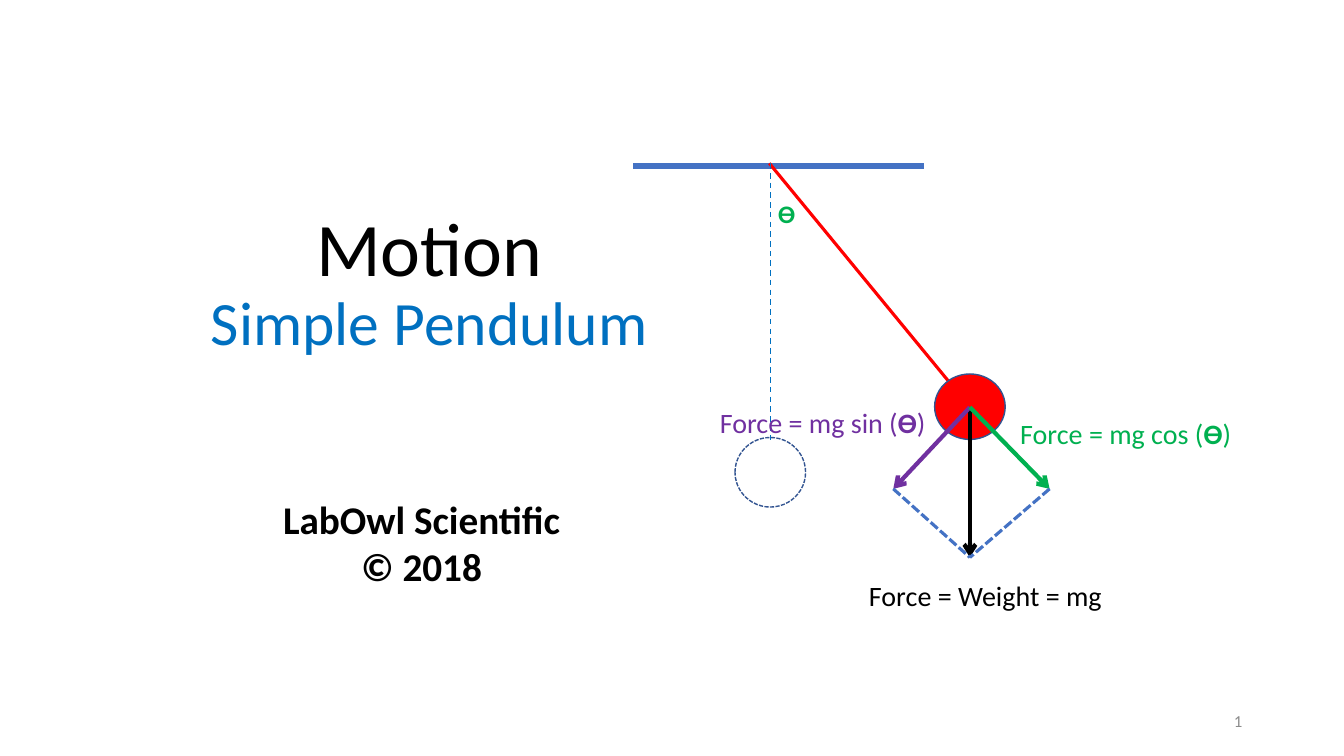
from dataclasses import dataclass
from lxml.etree import SubElement
from pptx import Presentation
from pptx.dml.color import RGBColor
from pptx.enum.dml import MSO_LINE as Dash
from pptx.enum.shapes import MSO_CONNECTOR as Wire, MSO_SHAPE as Form
from pptx.enum.text import MSO_ANCHOR as Anchor, PP_ALIGN as Align
from pptx.oxml.ns import qn
from pptx.util import Inches, Pt

Point = tuple[float, float]
Box = tuple[float, float, float, float]

BLACK, RED, GREEN = "000000", "FF0000", "00B050"
BLUE, PURPLE, EDGE = "4472C4", "7030A0", "325491"
THETA = "ϴ"


@dataclass
class Line:
    start: Point
    end: Point
    color: str
    width: float
    dash: Dash | None = None
    arrow: bool = False


@dataclass
class Ball:
    box: Box
    fill: str | None = None
    dash: Dash | None = None


@dataclass
class Span:
    text: str
    color: str = BLACK
    size: float = 20
    bold: bool = False


def paint(code: str) -> RGBColor:
    return RGBColor.from_string(code)


def add_line(shapes, item: Line) -> None:
    ends = [Inches(n) for n in item.start + item.end]
    wire = shapes.add_connector(Wire.STRAIGHT, *ends)
    wire.line.color.rgb = paint(item.color)
    wire.line.width = Pt(item.width)
    if item.dash:
        wire.line.dash_style = item.dash
    if item.arrow:
        SubElement(wire.line._get_or_add_ln(), qn("a:tailEnd"), type="arrow")
    SubElement(wire._element.spPr, qn("a:effectLst"))


def add_ball(shapes, item: Ball) -> None:
    ball = shapes.add_shape(Form.OVAL, *[Inches(n) for n in item.box])
    ball.shadow.inherit = False
    if item.fill:
        ball.fill.solid()
        ball.fill.fore_color.rgb = paint(item.fill)
    else:
        ball.fill.background()
    ball.line.color.rgb = paint(EDGE)
    ball.line.width = Pt(1)
    if item.dash:
        ball.line.dash_style = item.dash


def add_text(shapes, box: Box, *rows: list[Span], align: Align = Align.LEFT,
             anchor: Anchor = Anchor.TOP, space: float = 1.0) -> None:
    frame = shapes.add_textbox(*[Inches(n) for n in box]).text_frame
    frame.word_wrap = True
    frame.vertical_anchor = anchor
    for i, row in enumerate(rows):
        para = frame.add_paragraph() if i else frame.paragraphs[0]
        para.alignment = align
        para.line_spacing = space
        for span in row:
            if span.text == "\n":
                para.add_line_break()
                continue
            run = para.add_run()
            run.text = span.text
            run.font.name = "Calibri"
            run.font.size = Pt(span.size)
            run.font.bold = span.bold
            run.font.color.rgb = paint(span.color)


def force(name: str, color: str) -> list[Span]:
    return [Span(f"Force = mg {name} (", color),
            Span(THETA, color, bold=True), Span(")", color)]


def main() -> None:
    deck = Presentation()
    deck.slide_width, deck.slide_height = Inches(13.33), Inches(7.5)
    shapes = deck.slides.add_slide(deck.slide_layouts[6]).shapes

    add_text(shapes, (1.9, 2.02, 4.72, 1.61),
             [Span("Motion", size=54), Span("\n"),
              Span("Simple Pendulum", "0070C0", 44)],
             align=Align.CENTER, anchor=Anchor.MIDDLE, space=0.9)
    add_text(shapes, (2.37, 4.86, 3.62, 1.04),
             [Span("LabOwl Scientific", size=28, bold=True)],
             [Span("© 2018", size=28, bold=True)], align=Align.CENTER)
    add_text(shapes, (9.42, 6.95, 3, 0.4), [Span("1", "8C8C8C", 12)],
             align=Align.RIGHT, anchor=Anchor.MIDDLE)

    bob, foot = (9.62, 4.04), (9.62, 5.53)
    left, right = (8.86, 4.85), (10.41, 4.85)
    items = [
        Line((6.28, 1.65), (9.16, 1.65), BLUE, 4.5),
        Line((7.63, 1.62), bob, RED, 2.25),
        Ball((9.27, 3.71, 0.7, 0.65), fill=RED),
        Line((7.64, 1.62), (7.64, 4.37), "0070C0", 1, Dash.DASH),
        Ball((7.29, 4.34, 0.7, 0.69), dash=Dash.SQUARE_DOT),
        Line(bob, foot, BLACK, 3, arrow=True),
        Line(bob, left, PURPLE, 3, arrow=True),
        Line(bob, right, GREEN, 3, arrow=True),
        Line(left, foot, BLUE, 2.25, Dash.SQUARE_DOT),
        Line(right, foot, BLUE, 2.25, Dash.SQUARE_DOT),
    ]
    for item in items:
        if isinstance(item, Line):
            add_line(shapes, item)
        else:
            add_ball(shapes, item)

    add_text(shapes, (7.62, 1.92, 0.55, 0.4), [Span(THETA, GREEN, 18, True)])
    for spot, row in [((8.52, 5.69), [Span("Force = Weight = mg")]),
                      ((7.04, 3.97), force("sin", PURPLE)),
                      ((10.02, 4.08), force("cos", GREEN))]:
        add_text(shapes, (*spot, 2.75, 0.44), row)

    deck.save("out.pptx")


if __name__ == "__main__":
    main()
